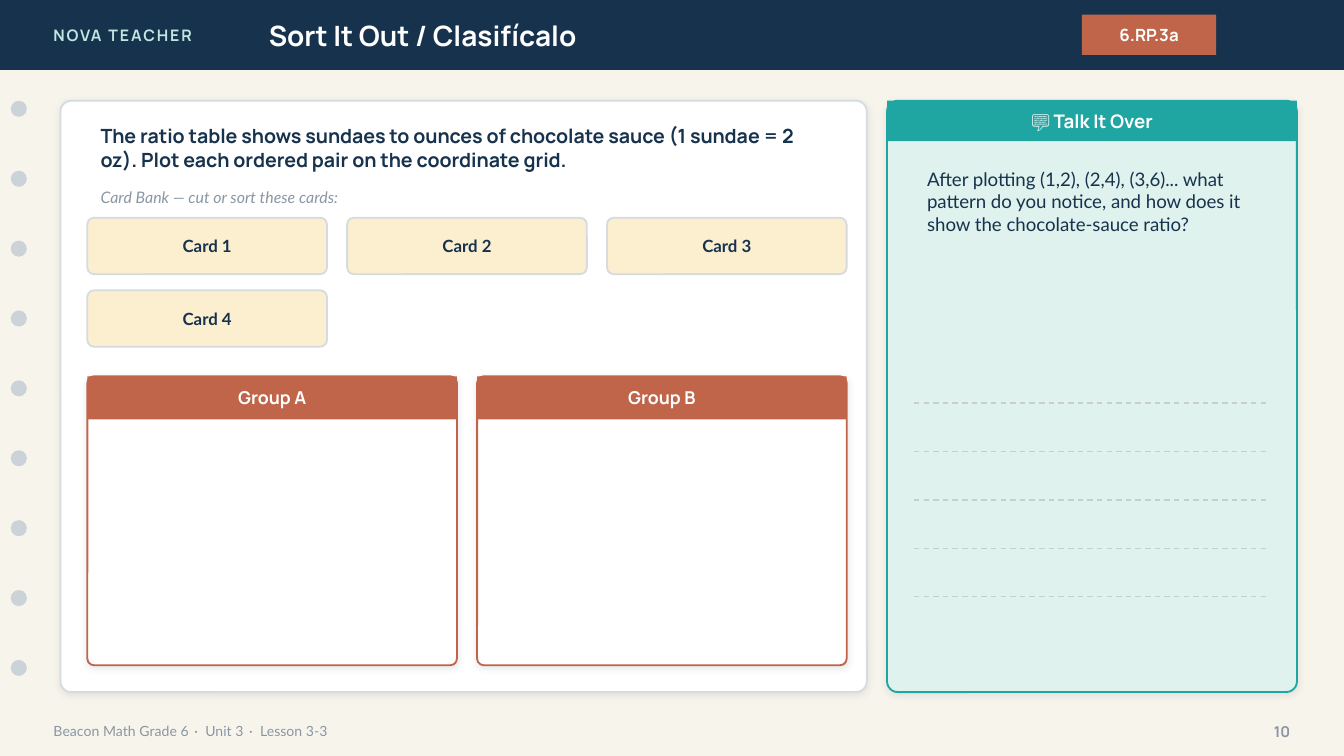
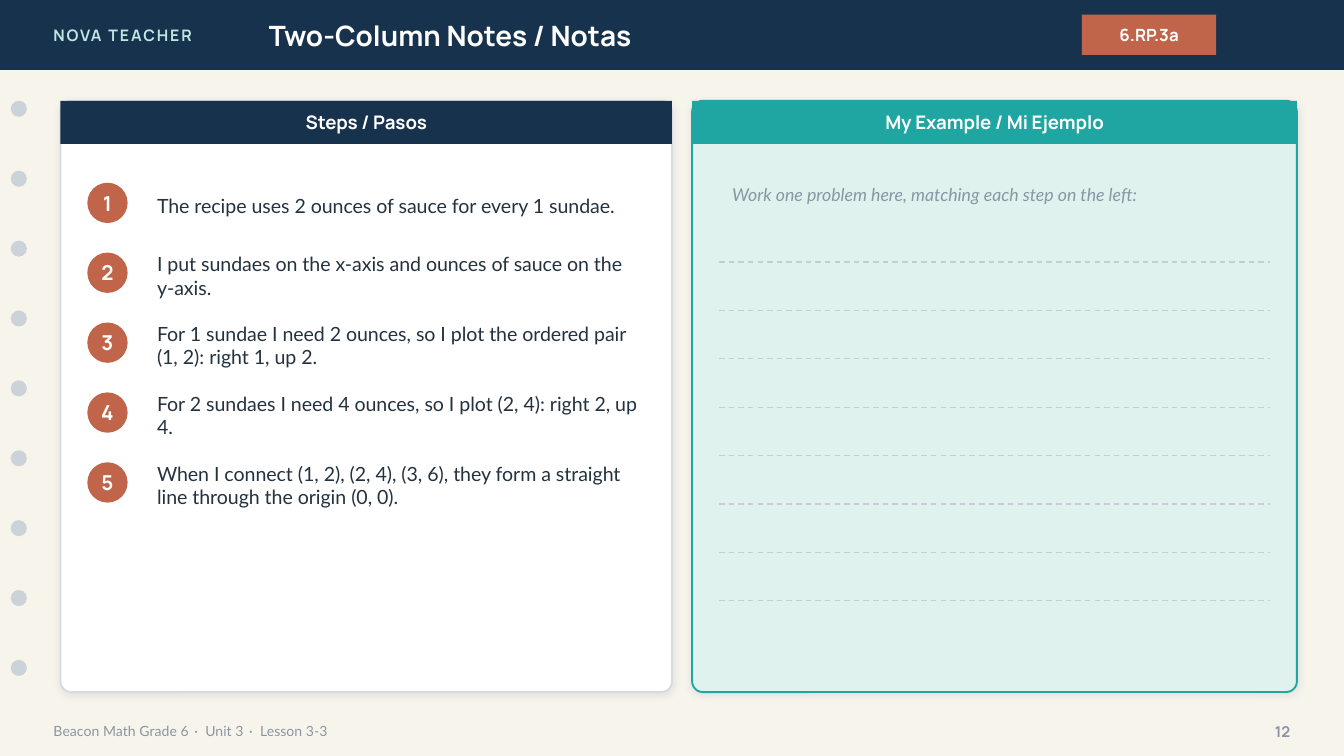
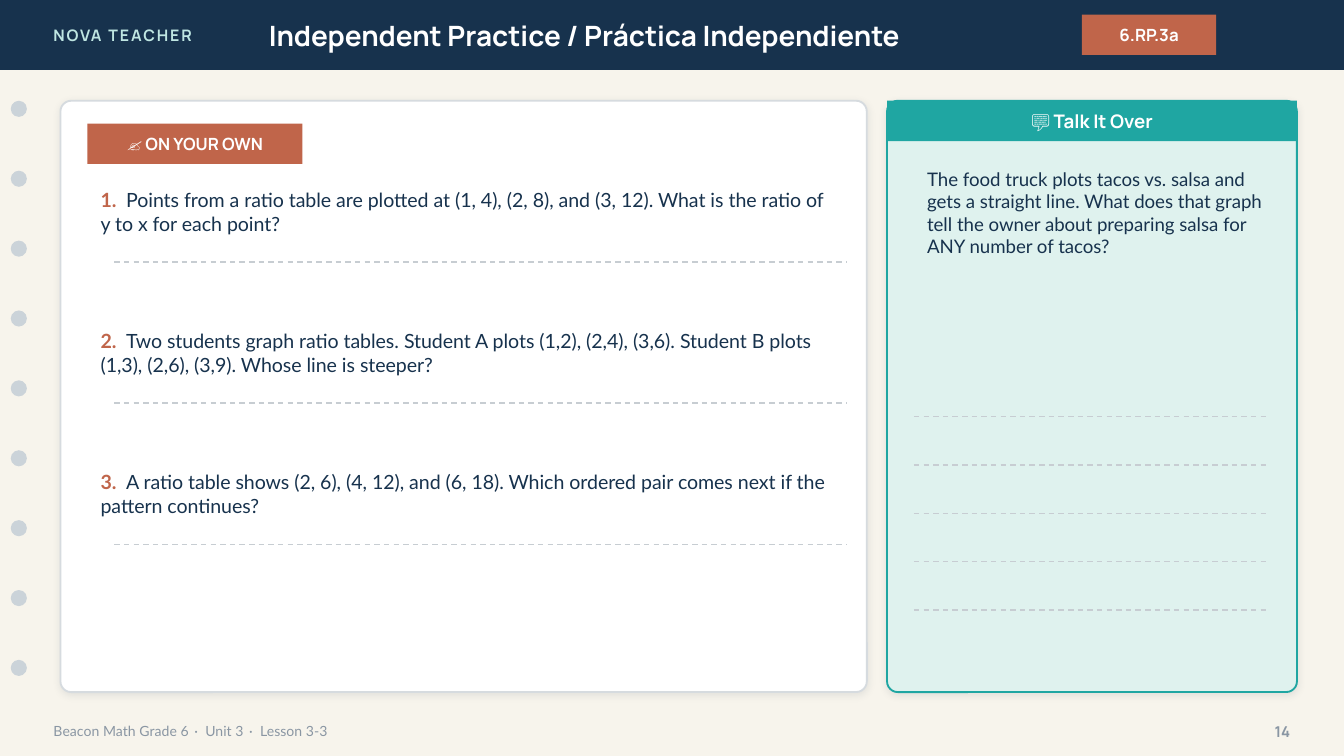
from dataclasses import dataclass
from typing import Any, NamedTuple, Optional

from lxml import etree
from pptx import Presentation
from pptx import slide as sl
from pptx import util as u
from pptx.dml import color
from pptx.enum import dml, shapes, text
from pptx.oxml import ns


class Style(NamedTuple):
    size: float
    hue: str
    face: str = "Manrope"
    bold: bool = True
    ital: bool = False
    space: int = 0


@dataclass(frozen=True)
class Theme:
    paper: str = "F7F4EC"
    navy: str = "17324D"
    clay: str = "C0654A"
    teal: str = "1FA6A2"
    mint: str = "DFF2EE"
    cream: str = "FBEFD0"
    white: str = "FFFFFF"
    edge: str = "D6DBDF"
    hole: str = "CBD3D9"
    rule: str = "C7CDD2"
    shade: str = "1C2E42"
    brand: Style = Style(8.5, "BFE6E2", space=100)
    title: Style = Style(15, "FFFFFF")
    tag: Style = Style(9, "FFFFFF")
    group: Style = Style(9.5, "FFFFFF")
    head: Style = Style(10, "FFFFFF")
    badge: Style = Style(11, "FFFFFF")
    task: Style = Style(10.5, "17324D")
    card: Style = Style(9, "17324D", "Lato")
    hint: Style = Style(8.5, "8A96A3", "Lato", False, True)
    cue: Style = Style(9.5, "8A96A3", "Lato", False, True)
    talk: Style = Style(10, "17324D", "Lato", False)
    step: Style = Style(10.5, "24323F", "Lato", False)
    count: Style = Style(10.5, "C0654A", "Lato")
    ask: Style = Style(10.5, "17324D", "Lato", False)
    foot: Style = Style(7.5, "8A96A3", "Lato", False)
    dot: Style = Style(7.5, "8A96A3", "Lato", False, space=100)
    page: Style = Style(8, "8A96A3")


class Box(NamedTuple):
    x: float
    y: float
    w: float
    h: float


class Panel(NamedTuple):
    box: Box
    line: str
    fill: str = "FFFFFF"
    bar: float = 0
    tint: str = ""
    label: str = ""
    style: Optional[Style] = None
    curve: float = 0.08


class Rules(NamedTuple):
    x: float
    end: float
    y: float
    count: int
    step: float = 0.36


T = Theme()
RECT = shapes.MSO_SHAPE.RECTANGLE
ROUND = shapes.MSO_SHAPE.ROUNDED_RECTANGLE
OVAL = shapes.MSO_SHAPE.OVAL
LEFT, MID, RIGHT = text.PP_ALIGN.LEFT, text.PP_ALIGN.CENTER, text.PP_ALIGN.RIGHT
TOP, HALF = text.MSO_ANCHOR.TOP, text.MSO_ANCHOR.MIDDLE
WIDE = 10
TALL = WIDE * 9 / 16
MAIN = Box(0.45, 0.75, 6, 4.4)
INNER = 5.65
GAP = 0.15


def rgb(hue: str) -> color.RGBColor:
    return color.RGBColor.from_string(hue)


def apply(item: Any, vals: dict[str, Any]) -> None:
    for key, val in vals.items():
        setattr(item, key, val)


def place(box: Box) -> list[u.Length]:
    return [u.Inches(val) for val in box]


def write(par: Any, words: str, style: Style) -> None:
    run = par.add_run()
    run.text = words
    apply(run.font, {"name": style.face, "size": u.Pt(style.size),
                     "bold": style.bold, "italic": style.ital})
    run.font.color.rgb = rgb(style.hue)
    if style.space:
        run._r.get_or_add_rPr().set("spc", str(style.space))


def fit(frame: Any, anchor: Any, align: Any) -> Any:
    apply(frame, {"word_wrap": True, "auto_size": text.MSO_AUTO_SIZE.NONE,
                  "vertical_anchor": anchor})
    par = frame.paragraphs[0]
    par.alignment = align
    return par


def add_text(page: sl.Slide, box: Box, words: str, style: Style,
             anchor: Any = HALF, align: Any = LEFT) -> Any:
    par = fit(page.shapes.add_textbox(*place(box)).text_frame, anchor, align)
    if words:
        write(par, words, style)
    return par


def add_form(page: sl.Slide, kind: Any, box: Box, fill: str, line: str = "",
             label: str = "", style: Style = T.tag, curve: float = 0) -> Any:
    form = page.shapes.add_shape(kind, *place(box))
    form.shadow.inherit = False
    form.fill.solid()
    form.fill.fore_color.rgb = rgb(fill)
    if line:
        form.line.color.rgb = rgb(line)
        form.line.width = u.Pt(1)
    else:
        form.line.fill.background()
    if curve:
        form.adjustments[0] = curve / min(box.w, box.h)
    if label:
        write(fit(form.text_frame, HALF, MID), label, style)
    return form


def add_shade(form: Any) -> None:
    root = form.element.spPr.find(ns.qn("a:effectLst"))
    cast = etree.SubElement(root, ns.qn("a:outerShdw"), blurRad=str(u.Pt(4)),
                            dist=str(u.Pt(1)), dir="5400000", algn="bl",
                            rotWithShape="0")
    hue = etree.SubElement(cast, ns.qn("a:srgbClr"), val=T.shade)
    etree.SubElement(hue, ns.qn("a:alpha"), val="10000")


def add_panel(page: sl.Slide, item: Panel) -> None:
    add_shade(add_form(page, ROUND, item.box, item.fill, item.line,
                       curve=item.curve))
    if item.label:
        add_form(page, RECT, item.box._replace(h=item.bar), item.tint,
                 label=item.label, style=item.style)


def add_rules(page: sl.Slide, item: Rules) -> None:
    for idx in range(item.count):
        y = u.Inches(item.y + idx * item.step)
        line = page.shapes.add_connector(
            shapes.MSO_CONNECTOR.STRAIGHT, u.Inches(item.x), y,
            u.Inches(item.end), y)
        line.line.color.rgb = rgb(T.rule)
        apply(line.line, {"width": u.Pt(0.75),
                          "dash_style": dml.MSO_LINE.DASH})
        etree.SubElement(line.element.spPr, ns.qn("a:effectLst"))


def add_talk(page: sl.Slide, words: str, depth: float, y: float) -> None:
    add_panel(page, Panel(Box(6.6, 0.75, 3.05, 4.4), T.teal, T.mint, 0.3,
                          T.teal, "💬 Talk It Over", T.head))
    add_text(page, Box(6.8, 1.2, 2.7, depth), words, T.talk, TOP)
    add_rules(page, Rules(6.8, 9.45, y, 5))


def add_page(deck: Any, name: str, num: int) -> sl.Slide:
    page = deck.slides.add_slide(deck.slide_layouts[5])
    page.background.fill.solid()
    page.background.fill.fore_color.rgb = rgb(T.paper)
    band = add_form(page, RECT, Box(0, 0, WIDE, 0.52), T.navy)
    title = page.shapes.title
    title.element.addprevious(band.element)
    spot = place(Box(1.9, 0, 5.6, 0.52))
    apply(title, dict(zip(("left", "top", "width", "height"), spot)))
    write(fit(title.text_frame, HALF, LEFT), name, T.title)
    add_text(page, Box(0.3, 0, 2.4, 0.52), "NOVA TEACHER", T.brand)
    add_form(page, RECT, Box(8.05, 0.11, 1, 0.3), T.clay, label="6.RP.3a")
    for idx in range(9):
        add_form(page, OVAL, Box(0.08, 0.75 + idx * 0.52, 0.12, 0.12), T.hole)
    foot = add_text(page, Box(0.3, 5.3, 7, 0.28), "Beacon Math Grade 6", T.foot)
    for part in ("Unit 3", "Lesson 3-3"):
        write(foot, " · ", T.dot)
        write(foot, part, T.foot)
    add_text(page, Box(9.2, 5.3, 0.5, 0.28), str(num), T.page, align=RIGHT)
    return page


def add_sort(deck: Any) -> None:
    page = add_page(deck, "Sort It Out / Clasifícalo", 10)
    add_panel(page, Panel(MAIN, T.edge))
    add_text(page, Box(0.65, 0.9, 5.6, 0.4),
             "The ratio table shows sundaes to ounces of chocolate sauce "
             "(1 sundae = 2 oz). Plot each ordered pair on the coordinate grid.",
             T.task)
    add_text(page, Box(0.65, 1.35, 5.6, 0.24),
             "Card Bank — cut or sort these cards:", T.hint)
    wide = (INNER - 2 * GAP) / 3
    for idx in range(4):
        row, col = divmod(idx, 3)
        box = Box(0.65 + col * (wide + GAP), 1.62 + row * 0.54, wide, 0.42)
        add_form(page, ROUND, box, T.cream, T.edge, f"Card {idx + 1}",
                 T.card, 0.05)
    wide = (INNER - GAP) / 2
    for idx, mark in enumerate("AB"):
        box = Box(0.65 + idx * (wide + GAP), 2.8, wide, 2.15)
        add_panel(page, Panel(box, T.clay, T.white, 0.32, T.clay,
                              f"Group {mark}", T.group, 0.05))
    add_talk(page, "After plotting (1,2), (2,4), (3,6)... what pattern do you "
             "notice, and how does it show the chocolate-sauce ratio?", 1.5, 3)


def add_notes(deck: Any) -> None:
    page = add_page(deck, "Two-Column Notes / Notas", 12)
    add_panel(page, Panel(MAIN._replace(w=4.55), T.edge, T.white, 0.32,
                          T.navy, "Steps / Pasos", T.head))
    steps = (
        "The recipe uses 2 ounces of sauce for every 1 sundae.",
        "I put sundaes on the x-axis and ounces of sauce on the y-axis.",
        "For 1 sundae I need 2 ounces, so I plot the ordered pair (1, 2): "
        "right 1, up 2.",
        "For 2 sundaes I need 4 ounces, so I plot (2, 4): right 2, up 4.",
        "When I connect (1, 2), (2, 4), (3, 6), they form a straight line "
        "through the origin (0, 0).",
    )
    for idx, words in enumerate(steps):
        y = 1.3 + idx * 0.52
        badge = add_form(page, OVAL, Box(0.65, y + 0.06, 0.3, 0.3), T.clay,
                         label=str(idx + 1), style=T.badge)
        sides = ("left", "right", "top", "bottom")
        apply(badge.text_frame, {f"margin_{side}": 0 for side in sides})
        add_text(page, Box(1.07, y, 3.78, 0.46), words, T.step)
    add_panel(page, Panel(Box(5.15, 0.75, 4.5, 4.4), T.teal, T.mint, 0.32,
                          T.teal, "My Example / Mi Ejemplo", T.head))
    add_text(page, Box(5.35, 1.25, 4.1, 0.4),
             "Work one problem here, matching each step on the left:", T.cue)
    add_rules(page, Rules(5.35, 9.45, 1.95, 8))


def add_drill(deck: Any) -> None:
    page = add_page(deck, "Independent Practice / Práctica Independiente", 14)
    add_panel(page, Panel(MAIN, T.edge))
    add_form(page, RECT, Box(0.65, 0.92, 1.6, 0.3), T.clay,
             label="✍️ ON YOUR OWN")
    asks = (
        "Points from a ratio table are plotted at (1, 4), (2, 8), and (3, 12). "
        "What is the ratio of y to x for each point?",
        "Two students graph ratio tables. Student A plots (1,2), (2,4), (3,6). "
        "Student B plots (1,3), (2,6), (3,9). Whose line is steeper?",
        "A ratio table shows (2, 6), (4, 12), and (6, 18). Which ordered pair "
        "comes next if the pattern continues?",
    )
    for idx, words in enumerate(asks):
        par = add_text(page, Box(0.65, 1.35 + idx * 1.05, INNER, 0.5), "",
                       T.ask, TOP)
        tabs = etree.SubElement(par._p.get_or_add_pPr(), ns.qn("a:tabLst"))
        etree.SubElement(tabs, ns.qn("a:tab"), pos=str(u.Inches(0.19)),
                         algn="l")
        write(par, f"{idx + 1}.\t", T.count)
        write(par, words, T.ask)
        add_rules(page, Rules(0.85, 6.3, 1.95 + idx * 1.05, 1))
    add_talk(page, "The food truck plots tacos vs. salsa and gets a straight "
             "line. What does that graph tell the owner about preparing salsa "
             "for ANY number of tacos?", 1.7, 3.1)


def main() -> None:
    deck = Presentation()
    apply(deck, {"slide_width": u.Inches(WIDE), "slide_height": u.Inches(TALL)})
    for build in (add_sort, add_notes, add_drill):
        build(deck)
    deck.save("out.pptx")


if __name__ == "__main__":
    main()
